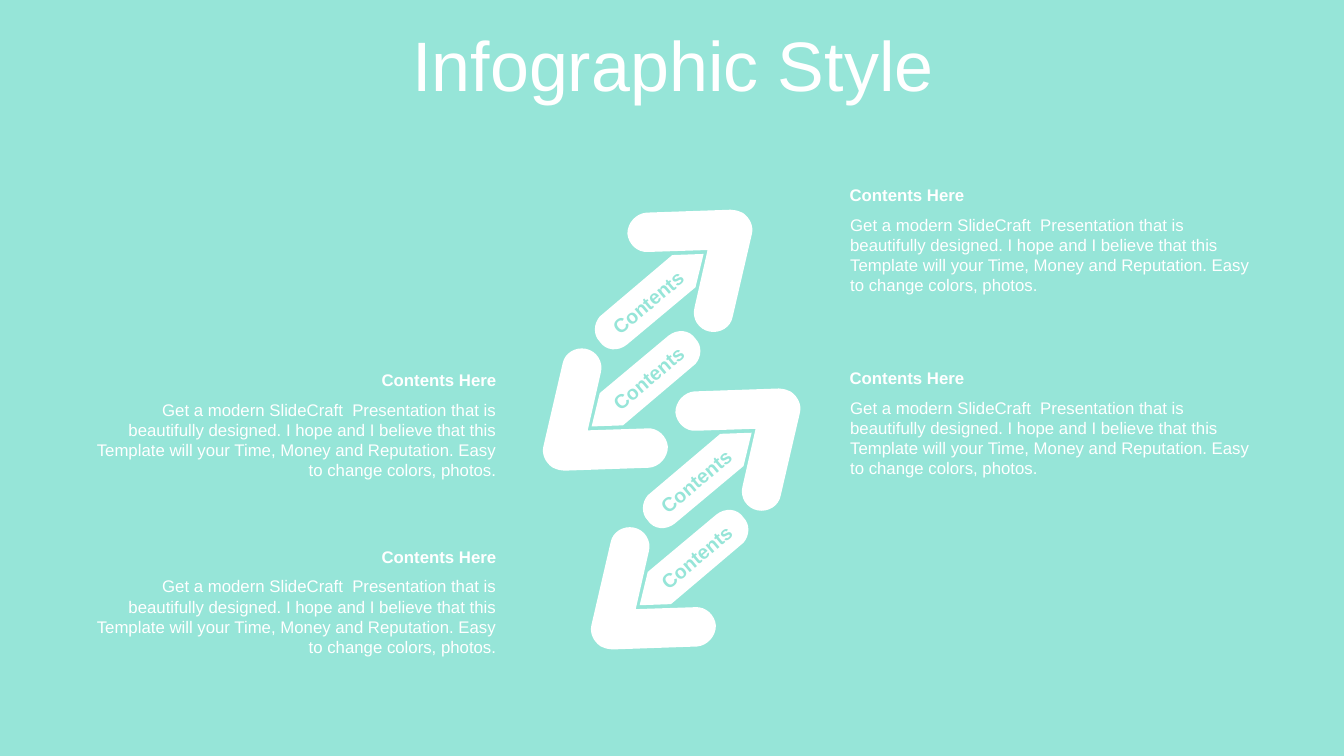
"""Build a one-slide infographic of four interlocking arrows with captions."""
from math import cos, radians, sin

from lxml import etree
from pptx import Presentation
from pptx.dml.color import RGBColor
from pptx.enum.text import MSO_ANCHOR, MSO_AUTO_SIZE, PP_ALIGN
from pptx.oxml.ns import qn
from pptx.util import Pt

LEFT, CENTER, RIGHT = PP_ALIGN.LEFT, PP_ALIGN.CENTER, PP_ALIGN.RIGHT
TOP, MIDDLE = MSO_ANCHOR.TOP, MSO_ANCHOR.MIDDLE
GROW, FIXED = MSO_AUTO_SIZE.SHAPE_TO_FIT_TEXT, MSO_AUTO_SIZE.NONE
MINT = RGBColor(0x96, 0xE5, 0xD8)
WHITE = RGBColor(0xFF, 0xFF, 0xFF)
FONT = "Arial"

TITLE = "Infographic Style"
LABEL = "Contents"
HEADING = "Contents Here"
BODY = ("Get a modern SlideCraft  Presentation that is beautifully designed. "
        "I hope and I believe that this Template will your Time, Money and "
        "Reputation. Easy to change colors, photos.")

# Each caption: heading left, body left, top, heading width, body width, alignment
CAPTIONS = [
    (599.8, 600.2, 128.6, 307.4, 307.4, LEFT),
    (599.8, 600.2, 259.2, 307.4, 307.4, LEFT),
    (60.5, 61.4, 260.6, 301.2, 300.3, RIGHT),
    (60.5, 61.4, 386.8, 301.2, 300.3, RIGHT),
]
BODY_DROP = 21.2

# Outlines: one point is a straight side, three points are a curve
ARROW_HEAD = [
    [(537.1, 167)],
    [(523.4, 226.1)],
    [(522, 234), (514.1, 238.3), (506.9, 236.9)],
    [(499, 235.4), (493.9, 227.5), (496.1, 219.6)],
    [(505.4, 178.6)],
    [(463, 180)],
    [(455.2, 180.7), (448.8, 174.2), (448.1, 167)],
    [(448.1, 159.1), (454.3, 152.6), (461.5, 151.9)],
    [(522, 149.8)],
    [(524.2, 149.8), (527, 150.5), (528.5, 151.2)],
    [(528.9, 151.3), (529.2, 151.5), (529.4, 151.6)],
    [(529.8, 151.8), (530.2, 151.9), (530.6, 152.1)],
    [(535.5, 155.5), (538.4, 161.3), (537.1, 167)],
]
ARROW_SHAFT = [
    [(502.6, 181.4)],
    [(496.8, 205.2)],
    [(447.8, 246.2)],
    [(441.4, 251.3), (432.7, 250.6), (428.4, 244.1)],
    [(423.4, 239), (424.1, 231.1), (428.4, 226.1)],
    [(480.2, 182.2)],
]
ARROW_PARTS = [(ARROW_HEAD, 102.9), (ARROW_SHAFT, 50)]
MIRROR = (925.2, 486)
PAIR_SHIFTS = [(0, 0), (34.3, 127.7)]
LABELS = [(462.8, 216, 104.4), (463.2, 270.2, 98.6)]
LABEL_HEIGHT = 24.2
LABEL_MARGIN = 8.6


def turn(point, degrees):
    """Rotate a point clockwise about the slide corner."""
    x, y = point
    angle = radians(degrees)
    return x * cos(angle) - y * sin(angle), x * sin(angle) + y * cos(angle)


def bend_curves(shape, outline):
    """Join each three-point segment into one cubic curve."""
    sides = iter(list(shape.element.iter(qn("a:lnTo"))))
    for segment in outline[1:]:
        group = [next(sides) for _ in segment]
        if len(group) == 3:
            curve = etree.SubElement(group[0].getparent(), qn("a:cubicBezTo"))
            group[0].addprevious(curve)
            for side in group:
                curve.append(side[0])
                side.getparent().remove(side)


def add_outline(page, outline, rotation, shift, flipped):
    """Draw a white outline in a turned frame, half round more when flipped."""
    points = [turn(point, -rotation) for segment in outline for point in segment]
    middle = [(min(values) + max(values)) / 2 for values in zip(*points)]
    x, y = turn(middle, rotation)
    if flipped:
        x, y = MIRROR[0] - x, MIRROR[1] - y
    corners = [(Pt(px), Pt(py)) for px, py in points]
    builder = page.shapes.build_freeform(*corners[0])
    builder.add_line_segments(corners[1:], close=True)
    shape = builder.convert_to_shape()
    bend_curves(shape, outline)
    shape.left = Pt(x + shift[0]) - shape.width // 2
    shape.top = Pt(y + shift[1]) - shape.height // 2
    shape.rotation = rotation + 180 * flipped
    shape.shadow.inherit = False
    shape.fill.solid()
    shape.fill.fore_color.rgb = WHITE
    shape.line.fill.background()


def add_text(page, frame, text, size, color=WHITE, bold=False, align=LEFT,
             anchor=TOP, fit=GROW):
    """Add a wrapped text box with one run."""
    box = page.shapes.add_textbox(*(Pt(length) for length in frame))
    box.text_frame.word_wrap = True
    box.text_frame.auto_size = fit
    box.text_frame.vertical_anchor = anchor
    para = box.text_frame.paragraphs[0]
    para.alignment = align
    span = para.add_run()
    span.text = text
    span.font.name = FONT
    span.font.size = Pt(size)
    span.font.bold = bold
    span.font.color.rgb = color
    return box


def main():
    """Compose and save the slide."""
    deck = Presentation()
    deck.slide_width, deck.slide_height = Pt(960), Pt(540)
    page = deck.slides.add_slide(deck.slide_layouts[6])
    page.background.fill.solid()
    page.background.fill.fore_color.rgb = MINT

    title = add_text(page, (25.2, 22.3, 911.5, 56.9), TITLE, 50,
                     align=CENTER, anchor=MIDDLE, fit=FIXED)
    title_para = title.text_frame.paragraphs[0]
    title_para.line_spacing = 0.8
    title_para.space_before = Pt(10)

    for shift in PAIR_SHIFTS:
        for flipped in (False, True):
            for outline, rotation in ARROW_PARTS:
                add_outline(page, outline, rotation, shift, flipped)

    for shift_x, shift_y in PAIR_SHIFTS:
        for x, y, width in LABELS:
            frame = (x + shift_x - width / 2, y + shift_y - LABEL_HEIGHT / 2,
                     width, LABEL_HEIGHT)
            label = add_text(page, frame, LABEL, 14, MINT, True, CENTER)
            label.text_frame.margin_left = label.text_frame.margin_right = Pt(LABEL_MARGIN)
            label.rotation = 320

    for heading_left, body_left, top, heading_width, body_width, align in CAPTIONS:
        add_text(page, (body_left, top + BODY_DROP, body_width, 65.5), BODY, 12, align=align)
        add_text(page, (heading_left, top, heading_width, 21.6), HEADING, 12,
                 bold=True, align=align)

    deck.save("out.pptx")


if __name__ == "__main__":
    main()
